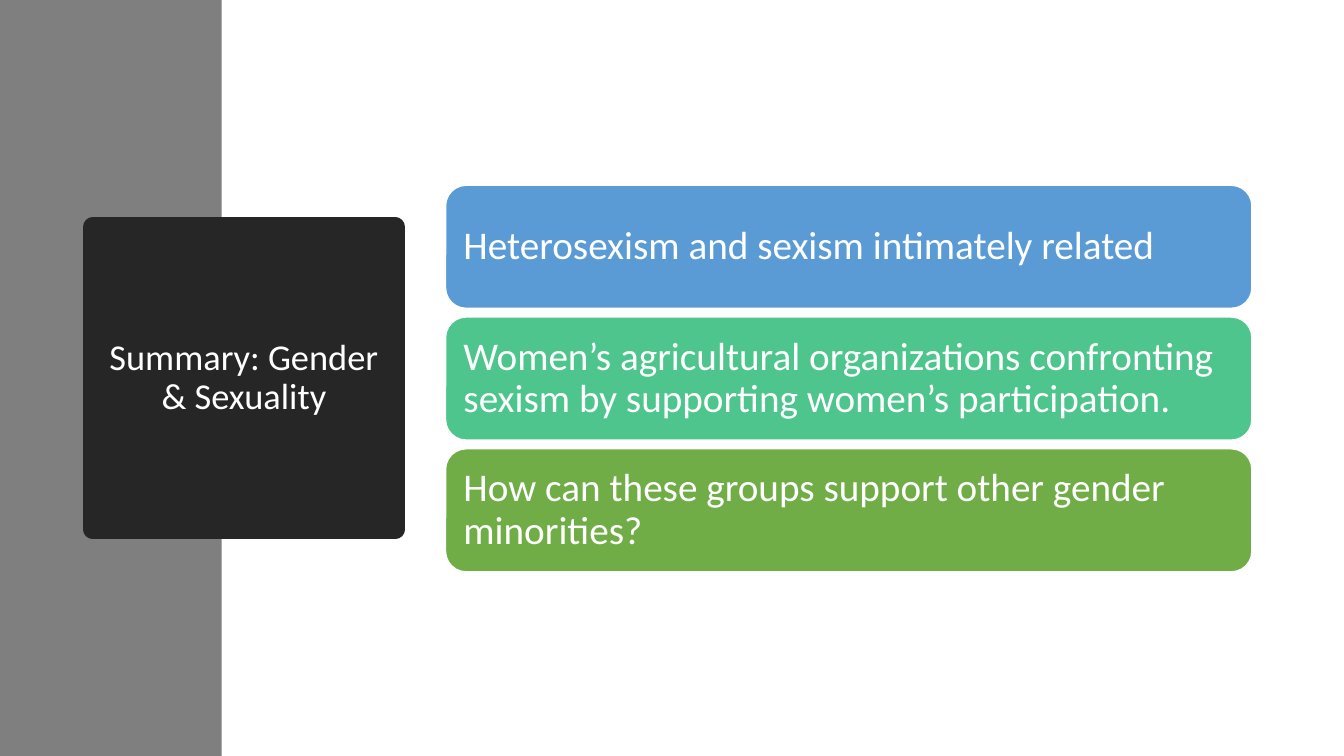
from lxml.etree import SubElement
from pptx import Presentation
from pptx.dml.color import RGBColor
from pptx.enum.shapes import MSO_SHAPE
from pptx.enum.text import MSO_ANCHOR, MSO_AUTO_SIZE, PP_ALIGN
from pptx.oxml.ns import qn
from pptx.util import Cm, Pt

COLORS = {
    "sidebar": "7F7F7F",
    "title": "262626",
    "blue": "5B9BD5",
    "teal": "4DC58D",
    "green": "70AD47",
    "white": "FFFFFF",
}
POINTS = [
    ("Heterosexism and sexism intimately related", "blue"),
    ("Women’s agricultural organizations confronting sexism by supporting women’s participation.", "teal"),
    ("How can these groups support other gender minorities?", "green"),
]
CARD_LEFT, CARD_TOP, CARD_WIDTH, CARD_HEIGHT, CARD_PITCH = 11.23, 4.67, 20.32, 3.1, 3.32


def paint(shape, color):
    shape.fill.solid()
    shape.fill.fore_color.rgb = RGBColor.from_string(COLORS[color])


def write(shape, text, size, align):
    frame = shape.text_frame
    frame.text = text
    frame.word_wrap = True
    frame.auto_size = MSO_AUTO_SIZE.NONE
    frame.vertical_anchor = MSO_ANCHOR.MIDDLE
    paragraph = frame.paragraphs[0]
    paragraph.alignment = align
    paragraph.line_spacing = 0.9
    paragraph.font.name = "Calibri"
    paragraph.font.size = Pt(size)
    paragraph.font.color.rgb = RGBColor.from_string(COLORS["white"])


prs = Presentation()
prs.slide_width, prs.slide_height = Cm(33.87), Cm(19.05)
slide = prs.slides.add_slide(prs.slide_layouts[5])
shapes = slide.shapes

sidebar = shapes.add_shape(MSO_SHAPE.RECTANGLE, 0, 0, Cm(5.59), prs.slide_height)
sidebar.shadow.inherit = False
sidebar.line.fill.background()
paint(sidebar, "sidebar")

title = shapes.title
title.left, title.top, title.width, title.height = Cm(2.34), Cm(5.72), Cm(7.62), Cm(7.62)
paint(title, "title")
title.line.color.rgb = RGBColor.from_string(COLORS["title"])
title.line.width = Pt(13.75)
SubElement(title.line._get_or_add_ln(), qn("a:round"))
write(title, "Summary: Gender & Sexuality", 26, PP_ALIGN.CENTER)
shapes._spTree.append(title._element)

for row, (point, color) in enumerate(POINTS):
    card = shapes.add_shape(MSO_SHAPE.ROUNDED_RECTANGLE, Cm(CARD_LEFT), Cm(CARD_TOP + row * CARD_PITCH),
                            Cm(CARD_WIDTH), Cm(CARD_HEIGHT))
    card.shadow.inherit = False
    paint(card, color)
    card.line.color.rgb = RGBColor.from_string(COLORS["white"])
    card.line.width = Pt(1)
    write(card, point, 28, PP_ALIGN.LEFT)
    frame = card.text_frame
    frame.margin_left = frame.margin_right = frame.margin_top = frame.margin_bottom = Cm(0.3)

prs.save("out.pptx")
